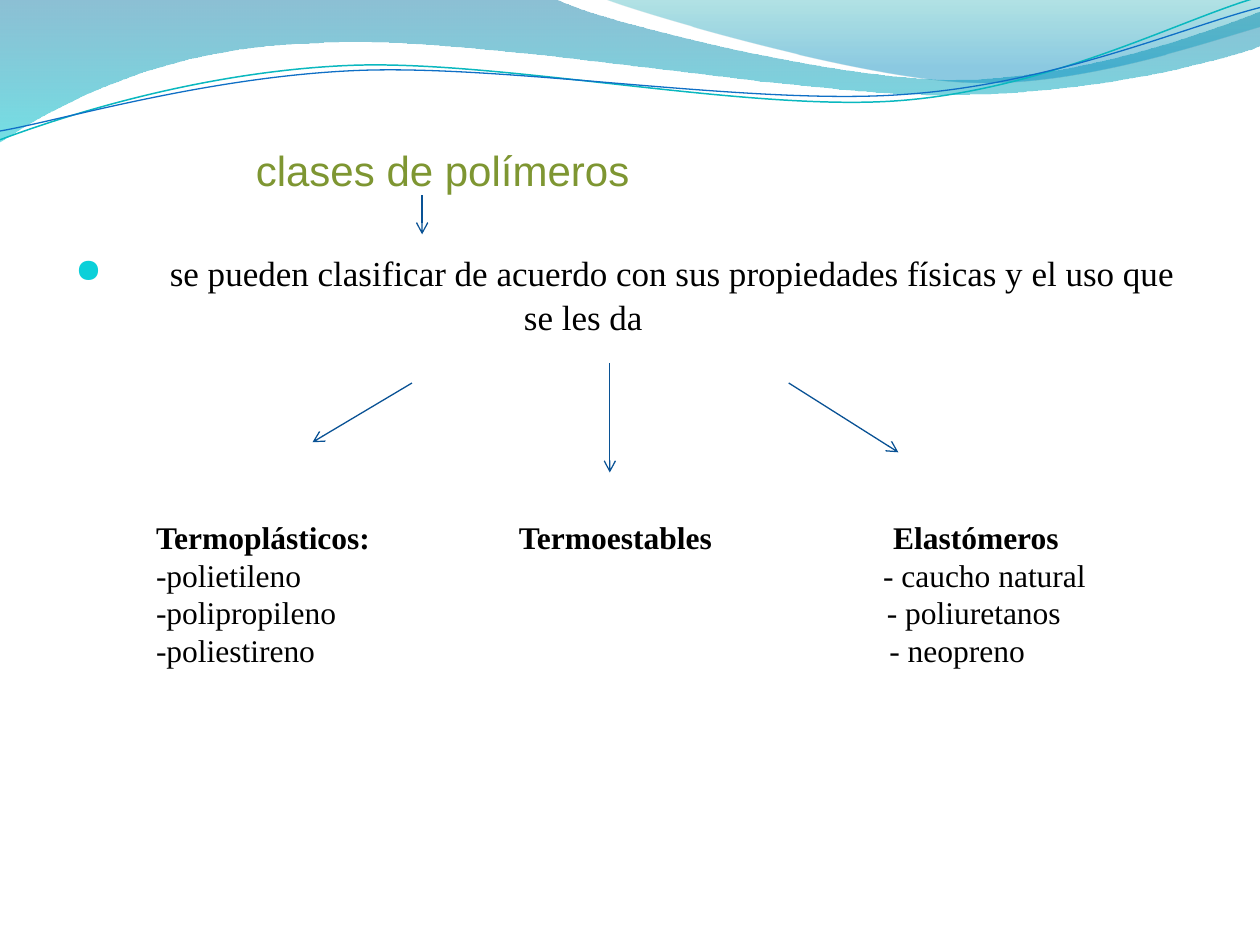
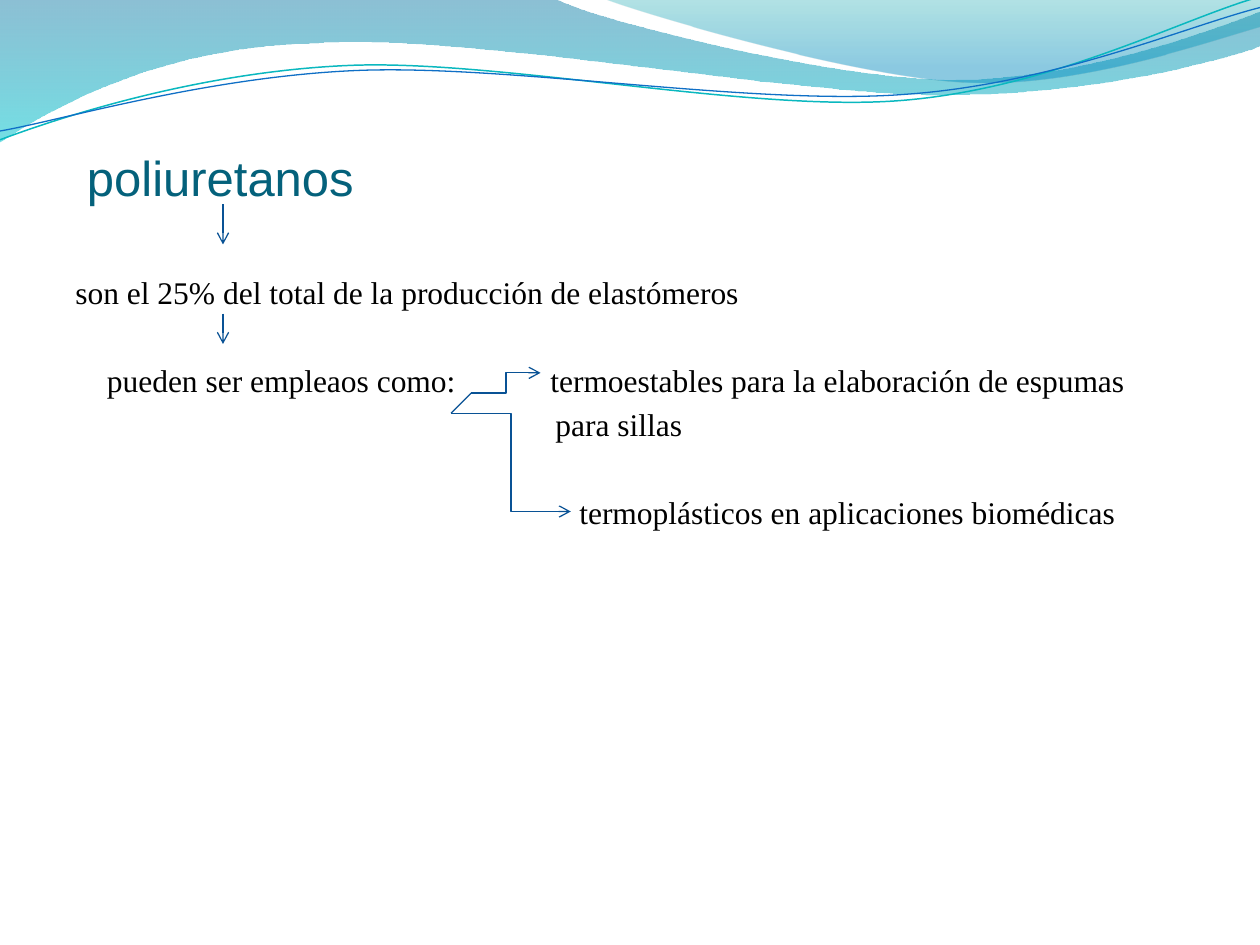
from lxml.etree import SubElement
from pptx import Presentation
from pptx.dml.color import RGBColor as Rgb
from pptx.enum.shapes import MSO_CONNECTOR as Link
from pptx.enum.text import MSO_ANCHOR as Anchor, PP_ALIGN as Align
from pptx.oxml.ns import qn
from pptx.util import Inches, Pt

HUES = {
    "olive": "7E9632", "teal": "04617B", "ink": "000000", "arrow": "095295",
    "dot": "0BD0D9", "aqua": "0AB8BF", "blue": "0F6FC6",
    "deep": "0074A1", "cyan": "00C6CF", "sea": "00A1A9", "sky": "008BBF",
}
HEAD, BODY = "Arial", "Times New Roman"

BANDS = [
    ([(-0.01, -0.01), (4.4, -0.01), (4.76, 0.17, 6.64, 0.63, 7.58, 0.63),
      (8.53, 0.63, 9.58, 0.26, 10, 0.09), (10.01, 0.36),
      (9.83, 0.44, 8.7, 0.76, 7.46, 0.75), (6.22, 0.75, 3.82, 0.28, 2.57, 0.34),
      (1.29, 0.36, 0.46, 0.83, -0.01, 1.13)],
     [("deep", 0, 45), ("cyan", 1, 55)]),
    ([(4.79, -0.01), (5.09, 0.11, 6.82, 0.62, 7.69, 0.65),
      (8.56, 0.69, 9.61, 0.32, 10, 0.21), (10, 0)],
     [("sea", 0, 30), ("sky", 0.8, 45)]),
]
WAVES = [
    ([(0, 1.11), (0.48, 0.93, 1.58, 0.57, 2.77, 0.52),
      (3.95, 0.47, 5.93, 0.89, 7.13, 0.8), (8.33, 0.71, 9.38, 0.15, 9.98, -0.02)],
     "aqua", 0.85),
    ([(0, 1.04), (0.47, 0.96, 1.64, 0.61, 2.83, 0.56),
      (4.03, 0.51, 5.97, 0.84, 7.17, 0.75), (8.36, 0.67, 9.41, 0.21, 10, 0.06)],
     "blue", 0.75),
]


def hue(name):
    """Return the named colour."""
    return Rgb.from_string(HUES[name])


def outline(slide, path, close):
    """Build a freeform from corners and cubic curves in inches."""
    ends = [(Inches(seg[-2]), Inches(seg[-1])) for seg in path]
    pen = slide.shapes.build_freeform(*ends[0])
    pen.add_line_segments(ends[1:], close=close)
    shape = pen.convert_to_shape()
    shape.shadow.inherit = False
    sides = list(shape.element.iter(qn("a:lnTo")))
    for side, seg in zip(sides, path[1:]):
        if len(seg) == 6:
            bend(side, seg, shape.left, shape.top)
    return shape


def bend(side, seg, left, top):
    """Turn a straight side into a cubic curve."""
    curve = side.makeelement(qn("a:cubicBezTo"))
    for x, y in zip(seg[::2], seg[1::2]):
        SubElement(curve, qn("a:pt"), x=str(Inches(x) - left), y=str(Inches(y) - top))
    side.getparent().replace(side, curve)


def tint(shape, stops):
    """Fill a shape with a see-through gradient from top to bottom."""
    shape.fill.gradient()
    shape.fill.gradient_angle = 270
    for stop, (name, pos, _) in zip(shape.fill.gradient_stops, stops):
        stop.color.rgb = hue(name)
        stop.position = pos
    marks = shape.element.spPr.iter(qn("a:srgbClr"))
    for mark, (_, _, alpha) in zip(marks, stops):
        SubElement(mark, qn("a:alpha"), val=str(alpha * 1000))
    shape.line.fill.background()


def waves(slide, master):
    """Draw the wave header and hand it to the master."""
    parts = []
    for path, stops in BANDS:
        band = outline(slide, path, True)
        tint(band, stops)
        parts.append(band)
    for path, name, width in WAVES:
        wave = outline(slide, path, False)
        wave.fill.background()
        wave.line.color.rgb = hue(name)
        wave.line.width = Pt(width)
        parts.append(wave)
    for num, part in enumerate(parts, 20):
        part.element.nvSpPr.cNvPr.set("id", str(num))
        master.shapes.element.append(part.element)


def style(para, font, size, name, bold=False):
    """Format the runs of a paragraph."""
    para.alignment = Align.LEFT
    for run in para.runs:
        run.font.name = font
        run.font.size = Pt(size)
        run.font.bold = bold
        run.font.color.rgb = hue(name)


def title(slide, text, box, inset, size, name):
    """Place and format the title; inset is left and bottom."""
    shape = slide.shapes.title
    shape.left, shape.top, shape.width, shape.height = map(Inches, box)
    frame = shape.text_frame
    frame.text = text
    frame.vertical_anchor = Anchor.BOTTOM
    frame.margin_left, frame.margin_bottom = map(Inches, inset)
    frame.margin_right = 0
    style(frame.paragraphs[0], HEAD, size, name)


def block(slide, lines, box, size=18):
    """Add a text box with one paragraph a line."""
    frame = slide.shapes.add_textbox(*map(Inches, box)).text_frame
    frame.word_wrap = True
    frame.text = "\n".join(lines)
    for para in frame.paragraphs:
        style(para, BODY, size, "ink")
    return frame


def stops(para, spots):
    """Set left tab stops in a paragraph."""
    tabs = SubElement(para._p.get_or_add_pPr(), qn("a:tabLst"))
    for spot in spots:
        SubElement(tabs, qn("a:tab"), pos=str(Inches(spot)), algn="l")


def indent(para, left, dot=False):
    """Indent a paragraph and hang a round bullet if wanted."""
    prop = para._p.get_or_add_pPr()
    prop.set("marL", str(Inches(left)))
    if dot:
        prop.set("indent", str(-Inches(left)))
        tone = SubElement(prop, qn("a:buClr"))
        SubElement(tone, qn("a:srgbClr"), val=HUES["dot"])
        SubElement(prop, qn("a:buSzPct"), val="95000")
        SubElement(prop, qn("a:buChar"), char="●")


def arrow(slide, start, end, kind=Link.STRAIGHT, tip=True):
    """Draw a connector, with an open arrowhead if wanted."""
    link = slide.shapes.add_connector(kind, *map(Inches, start + end))
    link.line.color.rgb = hue("arrow")
    link.line.width = Pt(0.75)
    prop = link.element.spPr
    if tip:
        SubElement(prop.find(qn("a:ln")), qn("a:tailEnd"), type="arrow")
    SubElement(prop, qn("a:effectLst"))


def classes(slide, box):
    """Lay out the three classes of polymers."""
    x, y, w, h = box
    title(slide, "clases de polímeros", (x + 1.38, y + 0.77, w - 1.88, 0.78),
          (0.65, 0), 24, "olive")
    lines = ["se pueden clasificar de acuerdo con sus propiedades físicas y el uso que",
             "se les da"]
    frame = block(slide, lines, (x + 0.5, y + 1.86, w - 1, h - 2.44), 20)
    frame.margin_top = Inches(0.14)
    first, last = frame.paragraphs
    indent(first, 0.75, True)
    indent(last, 3.56)
    last.space_before = Pt(1)
    rows = [
        ("Termoplásticos:\tTermoestables\tElastómeros", (2.88, 5.85)),
        ("-polietileno\t- caucho natural", (5.77,)),
        ("-polipropileno\t- poliuretanos", (5.8,)),
        ("-poliestireno\t- neopreno", (5.82,)),
    ]
    kinds = block(slide, [text for text, _ in rows], (x + 1.14, y + 4.06, 8.34, 1.62))
    for para, (_, spots) in zip(kinds.paragraphs, rows):
        stops(para, spots)
    for run in kinds.paragraphs[0].runs:
        run.font.bold = True
    for x1, y1, x2, y2 in [(3.35, 1.55, 3.35, 1.86), (3.27, 3.04, 2.48, 3.51),
                           (4.84, 2.88, 4.84, 3.75), (6.26, 3.04, 7.13, 3.59)]:
        arrow(slide, (x + x1, y + y1), (x + x2, y + y2))


def uses(slide, box):
    """Lay out the uses of polyurethanes."""
    x, y, w, h = box
    title(slide, "poliuretanos", (x + 0.5, y + 0.77, w - 1, 0.93),
          (0.19, 0.06), 28, "teal")
    rows = [
        ("son el 25% del total de la producción de elastómeros", (), 0),
        ("\tpueden ser empleaos como:\ttermoestables para la elaboración de espumas",
         (0.25, 3.77), 28.7),
        ("\tpara sillas", (3.81,), 3.6),
        ("\ttermoplásticos en aplicaciones biomédicas", (4,), 28.7),
    ]
    frame = block(slide, [row[0] for row in rows], (x + 0.5, y + 2.12, w - 1, h - 2.7))
    for para, (_, spots, gap) in zip(frame.paragraphs, rows):
        para.space_before = Pt(gap)
        if spots:
            stops(para, spots)
    for y1, y2 in [(1.62, 1.94), (2.49, 2.73)]:
        arrow(slide, (x + 1.77, y + y1), (x + 1.77, y + y2))
    fork, base = (x + 3.74, y + 3.12), (x + 3.58, y + 3.28)
    arrow(slide, fork, (x + 4.29, y + 2.96), Link.ELBOW)
    arrow(slide, base, (x + 4.53, y + 4.06), Link.ELBOW)
    arrow(slide, fork, base, tip=False)


def main():
    """Build and save the slides."""
    deck = Presentation()
    deck.slide_width, deck.slide_height = Inches(10), Inches(7.5)
    for num, fill in enumerate((classes, uses)):
        slide = deck.slides.add_slide(deck.slide_layouts[5])
        if num == 0:
            waves(slide, deck.slide_master)
        fill(slide, (0, 0, 10, 7.5))
    deck.save("out.pptx")


if __name__ == "__main__":
    main()
